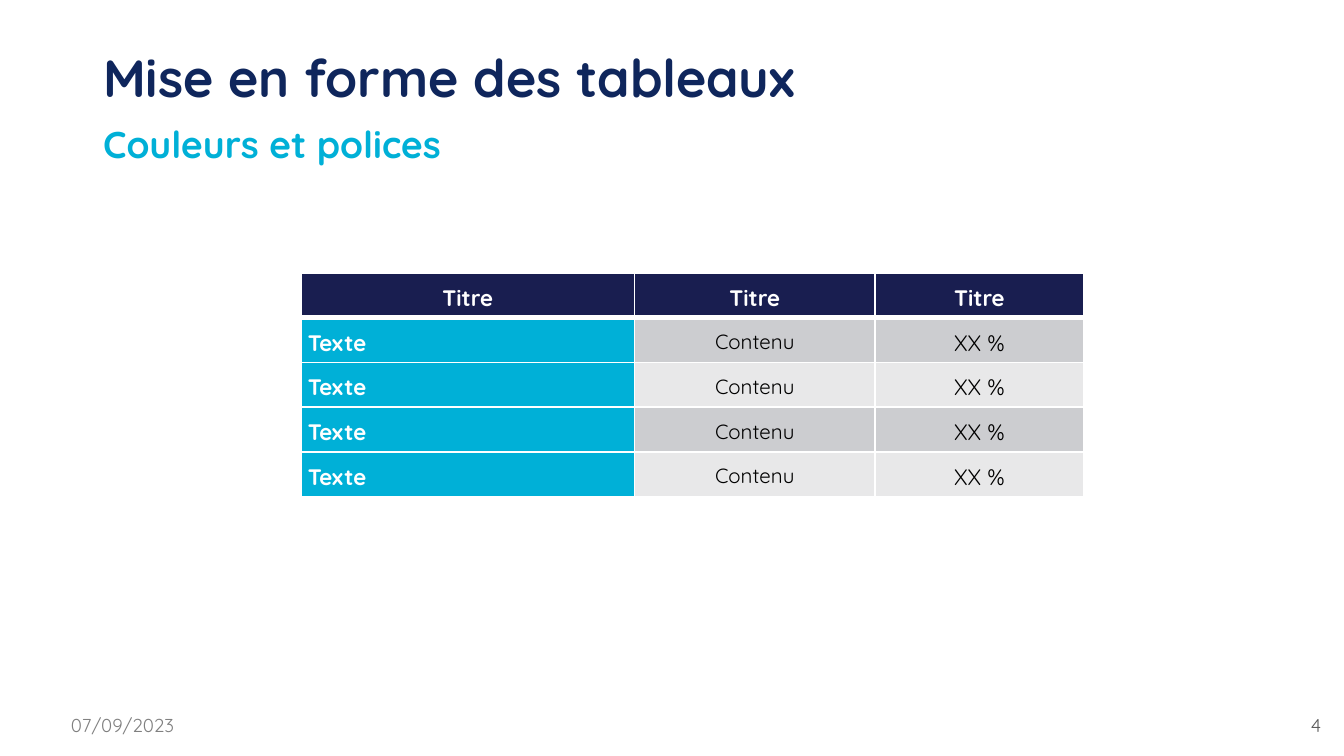
from dataclasses import dataclass

from lxml import etree
from pptx import Presentation
from pptx.dml.color import RGBColor
from pptx.enum import text
from pptx.oxml.ns import qn
from pptx.util import Cm, Pt

LEFT, CENTER, RIGHT = text.PP_ALIGN.LEFT, text.PP_ALIGN.CENTER, text.PP_ALIGN.RIGHT
TOP, MIDDLE = text.MSO_ANCHOR.TOP, text.MSO_ANCHOR.MIDDLE


@dataclass(frozen=True)
class Theme:
    font: str = "Quicksand"
    title: str = "0F265C"
    accent: str = "00B0D7"
    header: str = "191E50"
    bands: tuple = ("CCCDD0", "E8E8E9")
    white: str = "FFFFFF"
    black: str = "000000"
    date: str = "808080"
    number: str = "595959"
    title_size: int = 28
    subtitle_size: int = 20
    table_size: int = 12
    content_size: int = 11
    footer_size: int = 10


THEME = Theme()


@dataclass(frozen=True)
class Style:
    size: int
    color: str
    bold: bool = False
    align: text.PP_ALIGN = LEFT


@dataclass(frozen=True)
class Label:
    text: str
    left: float
    top: float
    width: float
    height: float
    style: Style
    anchor: text.MSO_ANCHOR = TOP


HEADER = Style(THEME.table_size, THEME.white, True, CENTER)
ROW_NAME = Style(THEME.table_size, THEME.white, True)
CONTENT = Style(THEME.content_size, THEME.black, False, CENTER)
VALUE = Style(THEME.table_size, THEME.black, False, CENTER)

LABELS = [
    Label("07/09/2023", 1.09, 13.36, 2.59, 0.76, Style(THEME.footer_size, THEME.date)),
    Label("4", 22.71, 13.36, 2.51, 0.76,
          Style(THEME.footer_size, THEME.number, align=RIGHT)),
    Label("Couleurs et polices", 1.7, 2.16, 19.2, 1,
          Style(THEME.subtitle_size, THEME.accent, True)),
    Label("Mise en forme des tableaux", 1.7, 0.74, 19.2, 1.4,
          Style(THEME.title_size, THEME.title, True), MIDDLE),
]

COLUMN_WIDTHS = (6.3, 4.55, 3.94)
ROW_HEIGHTS = (0.76,) + (0.66,) * 4
ROWS = [("Titre",) * 3] + [("Texte", "Contenu", "XX %")] * 4


def write(tf, content: str, style: Style) -> None:
    tf.text = content
    p = tf.paragraphs[0]
    p.alignment = style.align
    font = p.runs[0].font
    font.name, font.size, font.bold = THEME.font, Pt(style.size), style.bold
    font.color.rgb = RGBColor.from_string(style.color)


def add_label(s, label: Label) -> None:
    box = s.shapes.add_textbox(Cm(label.left), Cm(label.top),
                               Cm(label.width), Cm(label.height))
    tf = box.text_frame
    tf.word_wrap = True
    tf.vertical_anchor = label.anchor
    write(tf, label.text, label.style)


def set_borders(cell, bottom: float) -> None:
    """Insert white borders ahead of the fill, as the schema requires."""
    tc_pr = cell._tc.get_or_add_tcPr()
    widths = {"a:lnL": 1, "a:lnR": 1, "a:lnT": 1, "a:lnB": bottom}
    for i, (tag, width) in enumerate(widths.items()):
        ln = etree.Element(qn(tag), w=str(Pt(width)))
        fill = etree.SubElement(ln, qn("a:solidFill"))
        etree.SubElement(fill, qn("a:srgbClr"), val=THEME.white)
        tc_pr.insert(i, ln)


def fill_cell(cell, content: str, style: Style, fill: str) -> None:
    cell.margin_left = cell.margin_right = Cm(0.13)
    cell.margin_top = cell.margin_bottom = Cm(0.13)
    cell.vertical_anchor = MIDDLE
    cell.fill.solid()
    cell.fill.fore_color.rgb = RGBColor.from_string(fill)
    write(cell.text_frame, content, style)
    p = cell.text_frame.paragraphs[0]
    p.line_spacing = 1.15
    p.space_after = Pt(3)


def add_table(s, left: float, top: float) -> None:
    table = s.shapes.add_table(len(ROWS), len(COLUMN_WIDTHS), Cm(left), Cm(top),
                               Cm(sum(COLUMN_WIDTHS)), Cm(sum(ROW_HEIGHTS))).table
    for column, width in zip(table.columns, COLUMN_WIDTHS):
        column.width = Cm(width)
    for i, values in enumerate(ROWS):
        table.rows[i].height = Cm(ROW_HEIGHTS[i])
        band = THEME.bands[(i - 1) % 2]
        styles = (ROW_NAME, CONTENT, VALUE) if i else (HEADER,) * 3
        fills = (THEME.accent, band, band) if i else (THEME.header,) * 3
        for j, value in enumerate(values):
            cell = table.cell(i, j)
            fill_cell(cell, value, styles[j], fills[j])
            set_borders(cell, bottom=1 if i else 3)
            if i == 1:  # same thick rule on both sides of the shared edge
                cell._tc.tcPr.find(qn("a:lnT")).set("w", str(Pt(3)))


def main() -> None:
    prs = Presentation()
    prs.slide_width, prs.slide_height = Cm(25.4), Cm(14.29)
    s = prs.slides.add_slide(prs.slide_layouts[6])

    # Footer, subtitle and title
    for label in LABELS:
        add_label(s, label)

    # Sample table
    add_table(s, 5.69, 5.16)

    prs.save("out.pptx")


if __name__ == "__main__":
    main()
